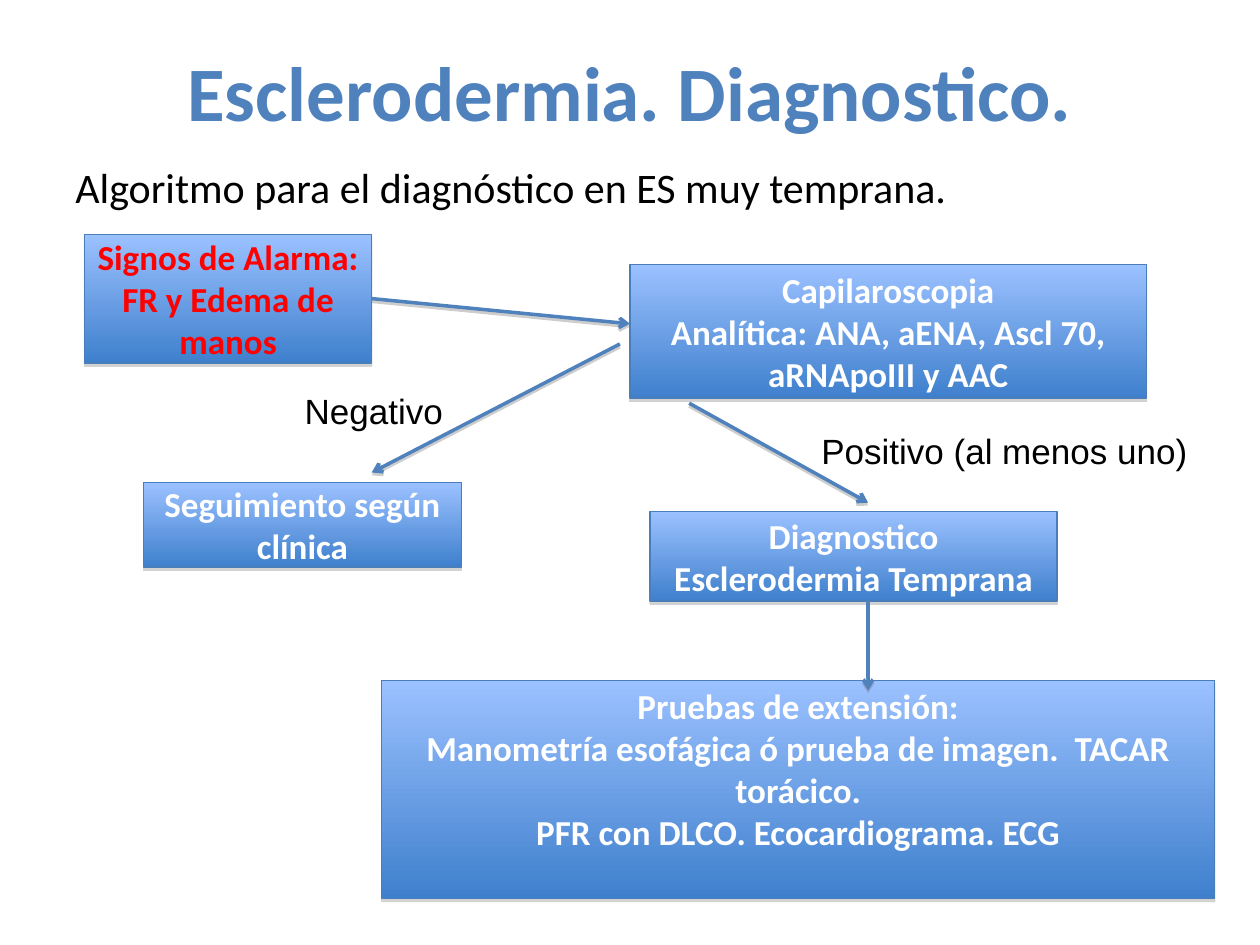
from lxml import etree
from pptx import Presentation
from pptx.dml.color import RGBColor
from pptx.enum.shapes import MSO_CONNECTOR as CONNECTOR, MSO_SHAPE as SHAPE
from pptx.enum.text import MSO_ANCHOR as ANCHOR, PP_ALIGN as ALIGN
from pptx.oxml import parse_xml
from pptx.oxml.ns import nsdecls, qn
from pptx.util import Inches, Pt

COLORS = {
    "accent": "4F81BD", "outline": "4A7EBB", "top": "9BC1FF", "bottom": "3F80CD",
    "shadow": "808080", "alarm": "FF0000", "white": "FFFFFF", "black": "000000",
}
RIGHT_SIDE = 3


def rgb(name):
    return RGBColor.from_string(COLORS[name])


def write(tf, lines, size, color, font="Calibri", bold=False, align=ALIGN.LEFT):
    tf.word_wrap = True
    tf.text = "\n".join(lines)
    for p in tf.paragraphs:
        p.alignment = align
        for r in p.runs:
            r.font.name, r.font.size, r.font.bold = font, Pt(size), bold
            r.font.color.rgb = rgb(color)


def add_shadow(sp, distance, opacity):
    """Replace the theme effect with a hard shadow straight below."""
    sp_pr = sp._element.spPr
    for old in sp_pr.findall(qn("a:effectLst")):
        sp_pr.remove(old)
    sp_pr.append(parse_xml(
        f'<a:effectLst {nsdecls("a")}><a:outerShdw blurRad="0" dist="{Pt(distance)}" '
        f'dir="5400000" rotWithShape="0"><a:srgbClr val="{COLORS["shadow"]}">'
        f'<a:alpha val="{opacity * 1000}"/></a:srgbClr></a:outerShdw></a:effectLst>'))


def add_text(slide, box, line, size, color, **style):
    s = slide.shapes.add_textbox(*map(Inches, box))
    write(s.text_frame, [line], size, color, **style)
    return s


def add_step(slide, box, lines, color="white"):
    s = slide.shapes.add_shape(SHAPE.FLOWCHART_PROCESS, *map(Inches, box))
    s.fill.gradient()
    s.fill.gradient_angle = 270
    for stop, name in zip(s.fill.gradient_stops, ("top", "bottom")):
        stop.color.rgb = rgb(name)
    s.line.color.rgb = rgb("outline")
    s.line.width = Pt(0.75)
    add_shadow(s, 1.8, 35)
    write(s.text_frame, lines, 20, color, bold=True, align=ALIGN.CENTER)
    s.text_frame.vertical_anchor = ANCHOR.MIDDLE
    return s


def add_arrow(slide, start, end):
    c = slide.shapes.add_connector(CONNECTOR.STRAIGHT, *map(Inches, start + end))
    c.line.color.rgb = rgb("accent")
    c.line.width = Pt(2)
    etree.SubElement(c.line._get_or_add_ln(), qn("a:tailEnd"), type="arrow")
    add_shadow(c, 1.6, 38)
    return c


def add_heading(slide, left, top, width):
    title = add_text(slide, (left, top, width, 1.18), "Esclerodermia. Diagnostico.",
                     44, "accent", bold=True, align=ALIGN.CENTER)
    title.text_frame.vertical_anchor = ANCHOR.MIDDLE
    add_text(slide, (left, top + 1.1, width, 5.47),
             "Algoritmo para el diagnóstico en ES muy temprana.", 24, "black")


def add_algorithm(slide, left, top):
    """Draw the decision flow with its upper left corner at (left, top)."""
    def at(x, y, *size):
        return (left + x, top + y, *size)

    alarm = add_step(slide, at(0, 0, 2.28, 1.02),
                     ["Signos de Alarma: FR y Edema de manos"], "alarm")
    add_step(slide, at(4.33, 0.24, 4.1, 1.06),
             ["Capilaroscopia", "Analítica: ANA, aENA, Ascl 70, aRNApoIII y AAC"])
    add_step(slide, at(0.47, 1.97, 2.52, 0.67), ["Seguimiento según clínica"])
    add_step(slide, at(4.49, 2.2, 3.23, 0.71), ["Diagnostico Esclerodermia Temprana"])
    tests = add_step(slide, at(2.36, 3.54, 6.61, 1.73), [
        "Pruebas de extensión:",
        "Manometría esofágica ó prueba de imagen.  TACAR torácico.",
        "PFR con DLCO. Ecocardiograma. ECG"])
    tests.text_frame.margin_bottom = Inches(0.38)

    to_exam = add_arrow(slide, at(2.28, 0.51), at(4.33, 0.71))
    to_exam.begin_connect(alarm, RIGHT_SIDE)
    add_arrow(slide, at(4.25, 0.87), at(2.28, 1.89))
    add_arrow(slide, at(4.8, 1.34), at(6.22, 2.13))
    add_arrow(slide, at(6.22, 2.91), at(6.22, 3.62))

    for box, label in ((at(1.65, 1.18, 1.57, 0.44), "Negativo"),
                       (at(5.75, 1.5, 3.23, 0.44), "Positivo (al menos uno)")):
        add_text(slide, box, label, 20, "black", font="Arial")


def main():
    prs = Presentation()
    prs.slide_width, prs.slide_height = Inches(10), Inches(7.5)
    slide = prs.slides.add_slide(prs.slide_layouts[6])
    add_heading(slide, 0.5, 0.13, 9)
    add_algorithm(slide, 0.67, 1.86)
    prs.save("out.pptx")


if __name__ == "__main__":
    main()
